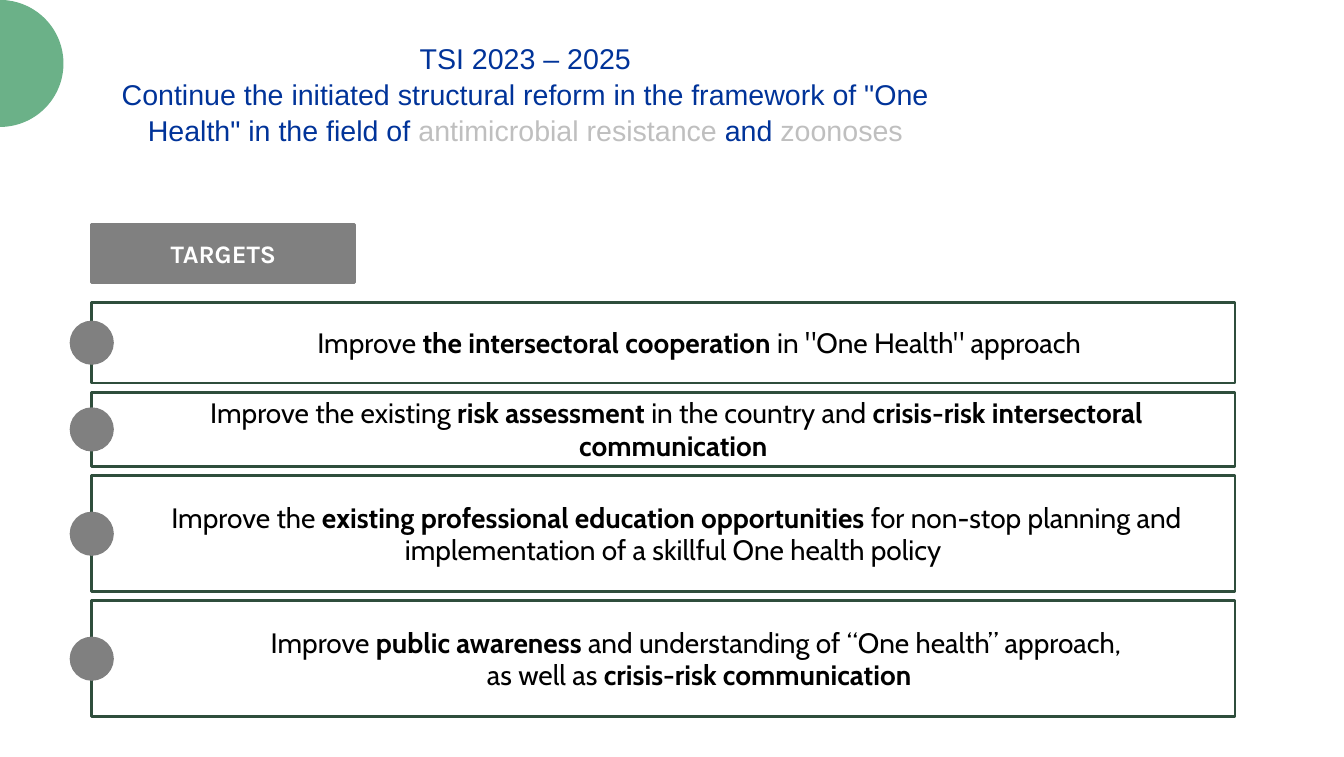
import math
from pptx import Presentation
from pptx import util as u
from pptx.dml.color import RGBColor
from pptx.enum import shapes, text

GREEN = RGBColor(0x6B, 0xB1, 0x88)
DARK_GREEN = RGBColor(0x2F, 0x4E, 0x3C)
BLUE = RGBColor(0x00, 0x33, 0x99)
SILVER = RGBColor(0xBF, 0xBF, 0xBF)
GRAY = RGBColor(0x80, 0x80, 0x80)
WHITE = RGBColor(0xFF, 0xFF, 0xFF)
BLACK = RGBColor(0x00, 0x00, 0x00)

COLUMNS, ROWS = 133.3, 75.1
LEFT, WIDTH, GAP, DOT = 9.1, 113.4, 0.9, 4.1

HEADING = [
    "TSI 2023 – 2025",
    'Continue the initiated structural reform in the framework of "One Health" '
    "in the field of *antimicrobial resistance *and *zoonoses",
]
TARGETS = [
    (8.0, 0.71, ['Improve *the intersectoral cooperation *in "One Health" approach']),
    (7.4, 0.26, ["Improve the existing *risk assessment *in the country and "
                 "*crisis-risk intersectoral communication "]),
    (11.5, 0.26, ["Improve the *existing professional education opportunities *for "
                  "non-stop planning and implementation of a skillful One health policy "]),
    (11.5, 0.71, ["Improve *public awareness *and understanding of “One health” approach, ",
                  "as well as *crisis-risk communication"]),
]


class TargetsSlide:
    heading = {"name": "Arial", "size": u.Pt(20.4), "bold": False, "color": BLUE}
    label = {"name": "Karla", "size": u.Pt(18), "bold": True, "color": WHITE}
    body = {"name": "Cabin", "size": u.Pt(20), "bold": False, "color": BLACK}

    def __init__(self, deck):
        self.deck = deck
        self.page = deck.slides.add_slide(deck.slide_layouts[5])

    def x(self, columns):
        return u.Emu(round(self.deck.slide_width * columns / COLUMNS))

    def y(self, rows):
        return u.Emu(round(self.deck.slide_height * rows / ROWS))

    def place(self, left, top, width, height):
        return self.x(left), self.y(top), self.x(width), self.y(height)

    def paint(self, shape, fill, line=None):
        shape.shadow.inherit = False
        shape.fill.solid()
        shape.fill.fore_color.rgb = fill
        if line is None:
            shape.line.fill.background()
        else:
            shape.line.color.rgb = line
            shape.line.width = u.Pt(2)

    def fill_text(self, box, lines, style, accent, anchor, spacing, indent=0):
        frame = box.text_frame
        settings = {"word_wrap": True, "auto_size": text.MSO_AUTO_SIZE.NONE,
                    "vertical_anchor": anchor}
        for name, value in settings.items():
            setattr(frame, name, value)
        for index, line in enumerate(lines):
            para = frame.add_paragraph() if index else frame.paragraphs[0]
            layout = {"alignment": text.PP_ALIGN.CENTER, "line_spacing": spacing,
                      "space_before": u.Pt(0)}
            for name, value in layout.items():
                setattr(para, name, value)
            if indent:
                properties = para._p.get_or_add_pPr()
                properties.set("marL", str(u.Inches(indent)))
                properties.set("indent", "0")
            for order, words in enumerate(line.split("*")):
                span = para.add_run()
                span.text = words
                values = {**style, **(accent if order % 2 else {})}
                span.font.color.rgb = values.pop("color")
                for name, value in values.items():
                    setattr(span.font, name, value)

    def half_disc(self, radius, steps=90):
        turns = [math.pi * step / steps for step in range(steps + 1)]
        points = [(self.x(radius * math.sin(turn)),
                   self.y(radius * (1 - math.cos(turn)))) for turn in turns]
        builder = self.page.shapes.build_freeform(*points[0])
        builder.add_line_segments(points[1:], close=True)
        self.paint(builder.convert_to_shape(), GREEN)

    def title(self, lines, *area):
        box = self.page.shapes.title
        box.left, box.top, box.width, box.height = self.place(*area)
        self.fill_text(box, lines, self.heading, {"color": SILVER},
                       text.MSO_ANCHOR.TOP, 1.05)

    def tag(self, words, *area):
        box = self.page.shapes.add_shape(
            shapes.MSO_SHAPE.RECTANGLE, *self.place(*area))
        self.paint(box, GRAY, GRAY)
        self.fill_text(box, [words], self.label, {}, text.MSO_ANCHOR.MIDDLE, 1.0)

    def target(self, top, height, indent, lines):
        group = self.page.shapes.add_group_shape().shapes
        box = group.add_shape(shapes.MSO_SHAPE.RECTANGLE,
                              *self.place(LEFT, top, WIDTH, height))
        self.paint(box, WHITE, DARK_GREEN)
        self.fill_text(box, lines, self.body, {"bold": True},
                       text.MSO_ANCHOR.MIDDLE, u.Pt(23.3), indent)
        dot = group.add_shape(
            shapes.MSO_SHAPE.FLOWCHART_CONNECTOR,
            *self.place(LEFT - DOT / 2, top + (height - DOT) / 2, DOT, DOT))
        self.paint(dot, GRAY, GRAY)


def main():
    deck = Presentation()
    deck.slide_width, deck.slide_height = u.Inches(13.33), u.Inches(7.51)
    slide = TargetsSlide(deck)
    slide.half_disc(6.3)
    slide.title(HEADING, 8.3, 3.4, 87.6, 12.6)
    slide.tag("TARGETS", LEFT, 22.3, 26.1, 5.7)
    top = 30
    for height, indent, lines in TARGETS:
        slide.target(top, height, indent, lines)
        top += height + GAP
    deck.save("out.pptx")


if __name__ == "__main__":
    main()
